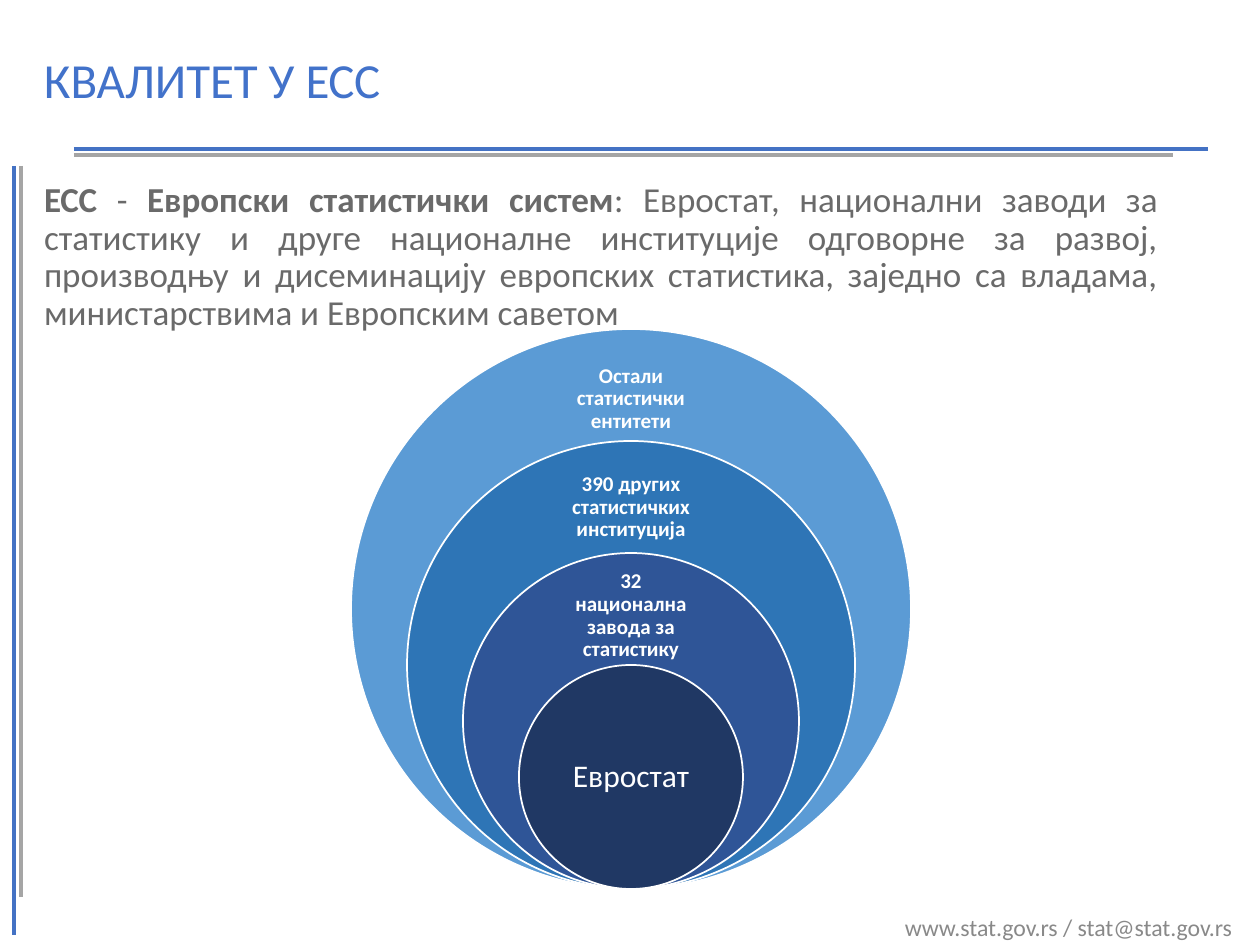
import pptx
import pptx.util
import pptx.dml.color
import pptx.enum.shapes
import pptx.enum.text
import pptx.oxml.ns
import lxml.etree

PX = 914400 / 126  # EMU in one px
ALIGN = pptx.enum.text.PP_ALIGN
ANCHOR = pptx.enum.text.MSO_ANCHOR
THEME = {
    "font": "Calibri",
    "title": "4272CA", "body": "6A6A6A", "footer": "898989", "white": "FFFFFF",
    "blue_rule": "4472C4", "grey_rule": "A5A5A5",
    "rings": ["5B9BD5", "2E75B6", "2F5597", "203864"],
    "title_size": 28, "body_size": 20, "footer_size": 13.6,
    "label_size": 12, "core_size": 18, "rule": 1.75, "ring_line": 1,
}


def rgb(name):
    return pptx.dml.color.RGBColor.from_string(THEME.get(name, name))


def add_text(box, runs, size, color, align, anchor=ANCHOR.TOP, inset=(13, 6), spacing=0.9):
    s = slide.shapes.add_textbox(*[round(v * PX) for v in box])
    tf = s.text_frame
    side, end = [round(v * PX) for v in inset]
    frame = {"word_wrap": True, "vertical_anchor": anchor,
             "margin_left": side, "margin_right": side,
             "margin_top": end, "margin_bottom": end}
    for key, value in frame.items():
        setattr(tf, key, value)
    p = tf.paragraphs[0]
    p.alignment = align
    p.line_spacing = spacing
    for text, bold in runs:
        r = p.add_run()
        r.text = text
        font = {"name": THEME["font"], "size": pptx.util.Pt(THEME[size]), "bold": bold}
        for key, value in font.items():
            setattr(r.font, key, value)
        r.font.color.rgb = rgb(color)


prs = pptx.Presentation()
prs.slide_width = round(1260 * PX)
prs.slide_height = round(945 * PX)
slide = prs.slides.add_slide(prs.slide_layouts[6])

# Footer
add_text((819, 907, 426, 38), [("www.stat.gov.rs / stat@stat.gov.rs", False)],
         "footer_size", "footer", ALIGN.RIGHT, spacing=1.0)

# Double rules: left edge, then under the title
for color, *ends in [
    ("blue_rule", 14, 166, 14, 935),
    ("grey_rule", 21, 166, 21, 897),
    ("blue_rule", 74, 149, 1208, 149),
    ("grey_rule", 74, 155, 1173, 155),
]:
    s = slide.shapes.add_connector(pptx.enum.shapes.MSO_CONNECTOR.STRAIGHT,
                                   *[round(v * PX) for v in ends])
    s.line.color.rgb = rgb(color)
    s.line.width = pptx.util.Pt(THEME["rule"])
    lxml.etree.SubElement(s._element.spPr, pptx.oxml.ns.qn("a:effectLst"))

# Title and definition
add_text((31, 20, 1197, 126), [("КВАЛИТЕТ У ЕСС", False)],
         "title_size", "title", ALIGN.LEFT, ANCHOR.MIDDLE)
add_text((31, 176, 1140, 712), [
    ("ЕСС", True), (" - ", False), ("Европски статистички систем", True),
    (": Евростат, национални заводи за статистику и друге националне институције "
     "одговорне за развој, производњу и дисеминацију европских статистика, "
     "заједно са владама, министарствима и Европским саветом", False),
], "body_size", "body", ALIGN.JUSTIFY)

# Nested circles sharing one bottom point, each a fifth of the largest smaller
CENTER, BOTTOM, LARGEST = 631, 889, 560
labels = [
    ("Остали статистички ентитети", 357, 84),
    ("390 других статистичких институција", 467, 81),
    ("32 национална завода за статистику", 578, 76),
    ("Евростат", 721, 112),
]
for i, (text, top, height) in enumerate(labels):
    d = LARGEST * (5 - i) // 5
    s = slide.shapes.add_shape(pptx.enum.shapes.MSO_SHAPE.OVAL,
                               *[round(v * PX) for v in (CENTER - d // 2, BOTTOM - d, d, d)])
    s.shadow.inherit = False
    s.fill.solid()
    s.fill.fore_color.rgb = rgb(THEME["rings"][i])
    s.line.color.rgb = rgb("white")
    s.line.width = pptx.util.Pt(THEME["ring_line"])
    core = i == len(labels) - 1
    width = 160 if core else 156
    inset = 18 if core else 11
    add_text((CENTER - width // 2, top, width, height), [(text, not core)],
             "core_size" if core else "label_size", "white",
             ALIGN.CENTER, ANCHOR.MIDDLE, (inset, inset))

prs.save("out.pptx")
